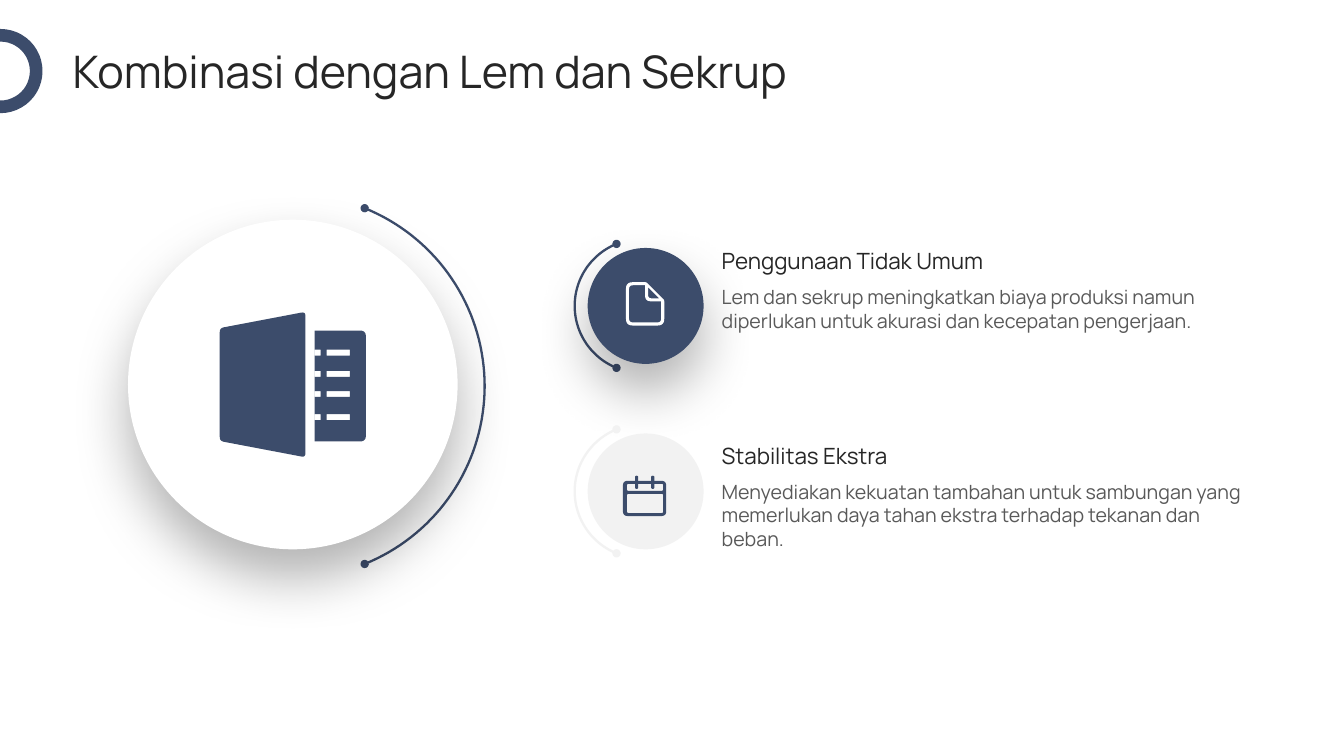
from math import cos, radians, sin

from lxml import etree
from pptx import Presentation
from pptx.dml.color import RGBColor
from pptx.enum.shapes import MSO_SHAPE
from pptx.enum.text import MSO_ANCHOR, MSO_AUTO_SIZE
from pptx.oxml.ns import qn
from pptx.util import Inches, Pt

OVAL = MSO_SHAPE.OVAL
TOP, MIDDLE, BOTTOM = MSO_ANCHOR.TOP, MSO_ANCHOR.MIDDLE, MSO_ANCHOR.BOTTOM
FIT_SHAPE, NO_FIT = MSO_AUTO_SIZE.SHAPE_TO_FIT_TEXT, MSO_AUTO_SIZE.NONE

NAVY, PALE, WHITE = "3C4C6B", "F2F2F2", "FFFFFF"
INK, GREY = "262626", "595959"
COLUMNS = 160  # square cells, 90 rows on a 16:9 slide


def rgb(value):
    return RGBColor.from_string(value)


def box(left, top, right, bottom, radius=0):
    return [(left, top, radius), (right, top, radius),
            (right, bottom, radius), (left, bottom, radius)]


def rounded(corners, steps=6):
    """Turn (x, y, radius) corners into the points of a smooth outline."""
    points = []
    for i, (x, y, radius) in enumerate(corners):
        if not radius:
            points.append((x, y))
            continue
        ends = []
        for nx, ny, _ in (corners[i - 1], corners[(i + 1) % len(corners)]):
            share = radius / ((nx - x) ** 2 + (ny - y) ** 2) ** 0.5
            ends.append((x + (nx - x) * share, y + (ny - y) * share))
        (ax, ay), (bx, by) = ends
        for k in range(steps + 1):
            t = k / steps
            a, m, b = (1 - t) ** 2, 2 * t * (1 - t), t ** 2
            points.append((a * ax + m * x + b * bx, a * ay + m * y + b * by))
    return points


class Deck:
    font = "Manrope"
    line_width = 1.63

    def __init__(self):
        self.prs = Presentation()
        self.prs.slide_width, self.prs.slide_height = Inches(13.333), Inches(7.5)
        self.cell = self.prs.slide_width / COLUMNS
        self.slide = self.prs.slides.add_slide(self.prs.slide_layouts[6])

    def grid(self, *cells):
        return [round(c * self.cell) for c in cells]

    def paint(self, sp, fill=None, line=None, width=line_width):
        if fill:
            sp.fill.solid()
            sp.fill.fore_color.rgb = rgb(fill)
        else:
            sp.fill.background()
        if line:
            sp.line.color.rgb = rgb(line)
            sp.line.width = Pt(width)
        else:
            sp.line.fill.background()
        sp.shadow.inherit = False

    def circle(self, cx, cy, radius, shadow=False, **style):
        sp = self.slide.shapes.add_shape(
            OVAL, *self.grid(cx - radius, cy - radius, 2 * radius, 2 * radius))
        self.paint(sp, **style)
        if shadow:
            effects = sp._element.spPr.find(qn("a:effectLst"))
            drop = etree.SubElement(
                effects, qn("a:outerShdw"), blurRad=str(Pt(40)), dist=str(Pt(20)),
                dir="5400000", algn="t", rotWithShape="0")
            tint = etree.SubElement(drop, qn("a:srgbClr"), val="000000")
            etree.SubElement(tint, qn("a:alpha"), val="30000")

    def outline(self, contours, close, **style):
        builder = None
        for contour in contours:
            points = [self.grid(*p) for p in contour]
            if builder is None:
                builder = self.slide.shapes.build_freeform(*points[0])
            else:
                builder.move_to(*points[0])
            builder.add_line_segments(points[1:], close=close)
        sp = builder.convert_to_shape()
        self.paint(sp, **style)
        return sp

    def arc(self, cx, cy, radius, side, color):
        """Dotted-end arc facing right (side 1) or left (side -1)."""
        points = [(cx + side * radius * cos(radians(a)), cy + radius * sin(radians(a)))
                  for a in range(-68, 69, 2)]
        sp = self.outline([points], False, line=color)
        ln = sp._element.spPr.find(qn("a:ln"))
        for end in ("a:headEnd", "a:tailEnd"):
            etree.SubElement(ln, qn(end), type="oval")

    def icon(self, cx, cy, parts, color):
        for part in parts:
            contours = [[(cx + x, cy + y) for x, y in rounded(c)] for c in part]
            self.outline(contours, True, fill=color)

    def text(self, left, top, width, height, words, size, color, anchor=TOP, fit=NO_FIT):
        sp = self.slide.shapes.add_textbox(*self.grid(left, top, width, height))
        tf = sp.text_frame
        tf.margin_left = tf.margin_top = tf.margin_right = tf.margin_bottom = 0
        tf.word_wrap, tf.auto_size, tf.vertical_anchor = True, fit, anchor
        tf.text = words
        font = tf.paragraphs[0].runs[0].font
        font.name, font.size, font.color.rgb = self.font, Pt(size), rgb(color)


# Icons: each part is an outline followed by its holes, centred on its disc
PAGE = [[
    [(-2.34, -2.82, 0.8), (0.08, -2.82, 0.15), (2.22, -0.68, 0.15),
     (2.22, 2.34, 0.8), (-2.34, 2.34, 0.8)],
    [(-1.98, -2.46, 0.5), (-0.06, -2.46, 0), (-0.06, -0.54, 0.7),
     (1.86, -0.54, 0), (1.86, 1.98, 0.5), (-1.98, 1.98, 0.5)],
    [(0.3, -2.22, 0), (1.62, -0.9, 0), (0.3, -0.9, 0.4)],
]]
CALENDAR = [
    [box(-2.7, -1.26, 2.46, 2.94, 0.6), box(-2.22, -0.9, 2.1, -0.06, 0.2),
     box(-2.22, 0.3, 2.1, 2.58, 0.2)],
    [box(x, -1.86, x + 0.38, -0.3, 0.18) for x in (-1.26, 0.66)],
]
SLOT_ROWS = (-4.14, -1.62, 0.78, 3.54)
NOTEBOOK = [
    [[(-8.7, -6.72, 0.5), (1.5, -8.66, 0.5), (1.5, 8.66, 0.5), (-8.7, 6.72, 0.5)]],
    [[(2.58, -6.42, 0), (8.7, -6.42, 0.7), (8.7, 6.78, 0.7), (2.58, 6.78, 0)]]
    + [box(left, y, right, y + 0.7) for y in SLOT_ROWS
       for left, right in ((2.58, 3.3), (4.02, 6.78))],
]

CARDS = [
    ("Penggunaan Tidak Umum",
     "Lem dan sekrup meningkatkan biaya produksi namun diperlukan untuk akurasi "
     "dan kecepatan pengerjaan.", NAVY, WHITE, PAGE, True),
    ("Stabilitas Ekstra",
     "Menyediakan kekuatan tambahan untuk sambungan yang memerlukan daya tahan "
     "ekstra terhadap tekanan dan beban.", PALE, NAVY, CALENDAR, False),
]


def main():
    deck = Deck()

    # Title with ring at the slide edge
    deck.circle(0.05, 8.46, 4.26, line=NAVY, width=9)
    deck.text(8.64, 5.64, 142.56, 5.64, "Kombinasi dengan Lem dan Sekrup", 32, INK, MIDDLE)

    # Large disc
    deck.arc(34.86, 45.96, 22.84, 1, NAVY)
    deck.circle(34.86, 45.78, 19.62, shadow=True, fill=WHITE)
    deck.icon(34.86, 45.78, NOTEBOOK, NAVY)

    # Cards
    for i, (heading, body, disc, mark, icon, shadow) in enumerate(CARDS):
        cy, top = 36.42 + 22.08 * i, 29.16 + 23.16 * i
        deck.arc(76.38, cy, 7.96, -1, disc)
        deck.circle(76.86, cy, 6.9, shadow=shadow, fill=disc)
        deck.icon(76.86, cy, icon, mark)
        deck.text(85.92, top, 62.64, 3.48, heading, 16, INK, BOTTOM, FIT_SHAPE)
        deck.text(85.92, top + 4.8, 62.64, 15.6, body, 14, GREY)

    deck.prs.save("out.pptx")


if __name__ == "__main__":
    main()
